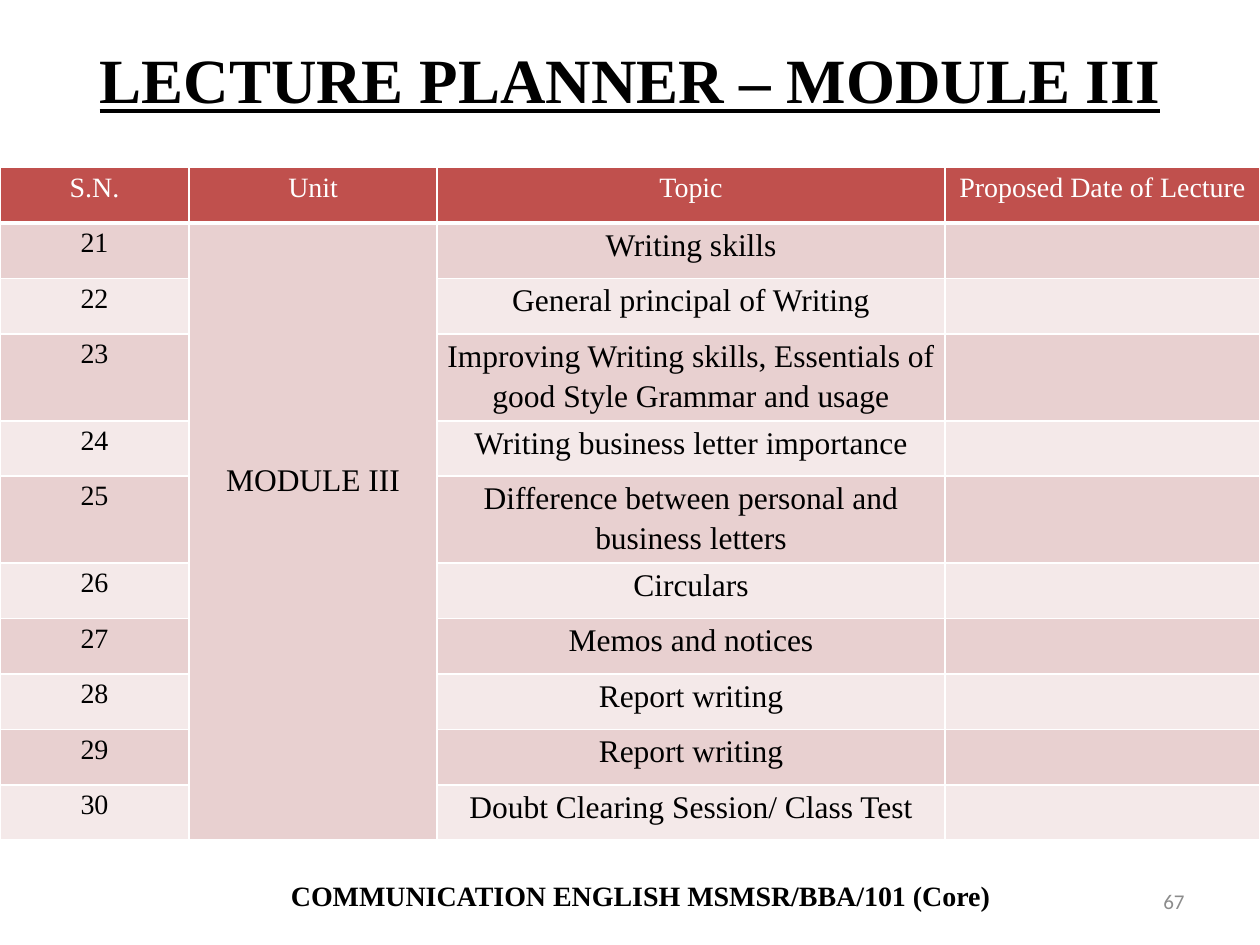
from lxml import etree
from pptx import Presentation
from pptx.dml.color import RGBColor
from pptx.enum.text import MSO_ANCHOR, PP_ALIGN
from pptx.oxml.ns import qn
from pptx.util import Inches, Pt

CENTER, RIGHT = PP_ALIGN.CENTER, PP_ALIGN.RIGHT
TOP, MIDDLE = MSO_ANCHOR.TOP, MSO_ANCHOR.MIDDLE

HEADINGS = ["S.N.", "Unit", "Topic", "Proposed Date of Lecture"]
UNIT = "MODULE III"
FIRST_LECTURE = 21
TOPICS = [
    "Writing skills",
    "General principal of Writing",
    "Improving Writing skills, Essentials of good Style Grammar and usage",
    "Writing business letter importance",
    "Difference between personal and business letters",
    "Circulars",
    "Memos and notices",
    "Report writing",
    "Report writing",
    "Doubt Clearing Session/ Class Test",
]
COLUMN_WIDTHS = [1.5, 1.97, 4.03, 2.5]
ROW_HEIGHTS = [0.44] * 3 + [0.5] + [0.44] * 7


def rgb(hex_color):
    return RGBColor.from_string(hex_color)


class PlannerSlide:
    serif, sans = "Times New Roman", "Calibri"
    black, white, gray = "000000", "FFFFFF", "8C8C8C"
    header_fill, bands = "C0504D", ("E8D0D0", "F4E9E9")

    def __init__(self, slide):
        self.slide = slide

    def style(self, paragraph, size, color, align=CENTER, face=serif, bold=False, underline=False):
        paragraph.alignment = align
        font = paragraph.font
        font.name, font.size, font.bold, font.underline = face, Pt(size), bold, underline
        font.color.rgb = rgb(color)

    def text(self, words, left, top, width, height, size, color, anchor=TOP, **look):
        box = self.slide.shapes.add_textbox(Inches(left), Inches(top), Inches(width), Inches(height))
        frame = box.text_frame
        frame.word_wrap = True
        frame.vertical_anchor = anchor
        frame.text = words
        self.style(frame.paragraphs[0], size, color, **look)

    def table(self, left, top, widths, heights):
        grid = self.slide.shapes.add_table(
            len(heights), len(widths), Inches(left), Inches(top),
            Inches(sum(widths)), Inches(sum(heights))).table
        grid.first_row = grid.horz_banding = False
        for column, width in zip(grid.columns, widths):
            column.width = Inches(width)
        for row, height in zip(grid.rows, heights):
            row.height = Inches(height)
        for r in range(len(heights)):
            fill = self.bands[(r - 1) % 2] if r else self.header_fill
            for c in range(len(widths)):
                cell = grid.cell(r, c)
                # The rule between the header and the body is thicker
                self.borders(cell, top=3 if r == 1 else 1, bottom=1 if r else 3)
                cell.fill.solid()
                cell.fill.fore_color.rgb = rgb(fill)
        return grid

    def borders(self, cell, top, bottom):
        properties = cell._tc.get_or_add_tcPr()
        for side, points in (("L", 1), ("R", 1), ("T", top), ("B", bottom)):
            line = etree.SubElement(properties, qn(f"a:ln{side}"), w=str(Pt(points)))
            solid = etree.SubElement(line, qn("a:solidFill"))
            etree.SubElement(solid, qn("a:srgbClr"), val=self.white)

    def cell_text(self, cell, words, size, color=black, offset=0):
        cell.margin_left = cell.margin_right = Inches(0.07)
        cell.margin_top, cell.margin_bottom = Inches(offset), 0
        cell.text = words
        paragraph = cell.text_frame.paragraphs[0]
        paragraph.line_spacing = 1.15
        self.style(paragraph, size, color)


def main():
    prs = Presentation()
    prs.slide_width, prs.slide_height = Inches(10), Inches(7.5)
    planner = PlannerSlide(prs.slides.add_slide(prs.slide_layouts[6]))

    # Title
    planner.text("LECTURE PLANNER – MODULE III", 0.5, 0, 9, 1.25, 36, planner.black,
                 anchor=MIDDLE, bold=True, underline=True)

    # Lecture table, with one unit cell beside all topics
    lectures = planner.table(0, 1.33, COLUMN_WIDTHS, ROW_HEIGHTS)
    for c, heading in enumerate(HEADINGS):
        planner.cell_text(lectures.cell(0, c), heading, 16, planner.white)
    for r, topic in enumerate(TOPICS, start=1):
        planner.cell_text(lectures.cell(r, 0), str(FIRST_LECTURE + r - 1), 16)
        planner.cell_text(lectures.cell(r, 2), topic, 18)
    unit = lectures.cell(1, 1)
    unit.merge(lectures.cell(len(TOPICS), 1))
    planner.cell_text(unit, UNIT, 18, offset=1.87)

    # Footer and slide number
    planner.text("COMMUNICATION ENGLISH MSMSR/BBA/101 (Core)", 1, 6.92, 8.17, 0.37, 16,
                 planner.black, bold=True)
    planner.text("67", 7.17, 6.95, 2.33, 0.4, 12, planner.gray, anchor=MIDDLE,
                 align=RIGHT, face=planner.sans)

    prs.save("out.pptx")


if __name__ == "__main__":
    main()
